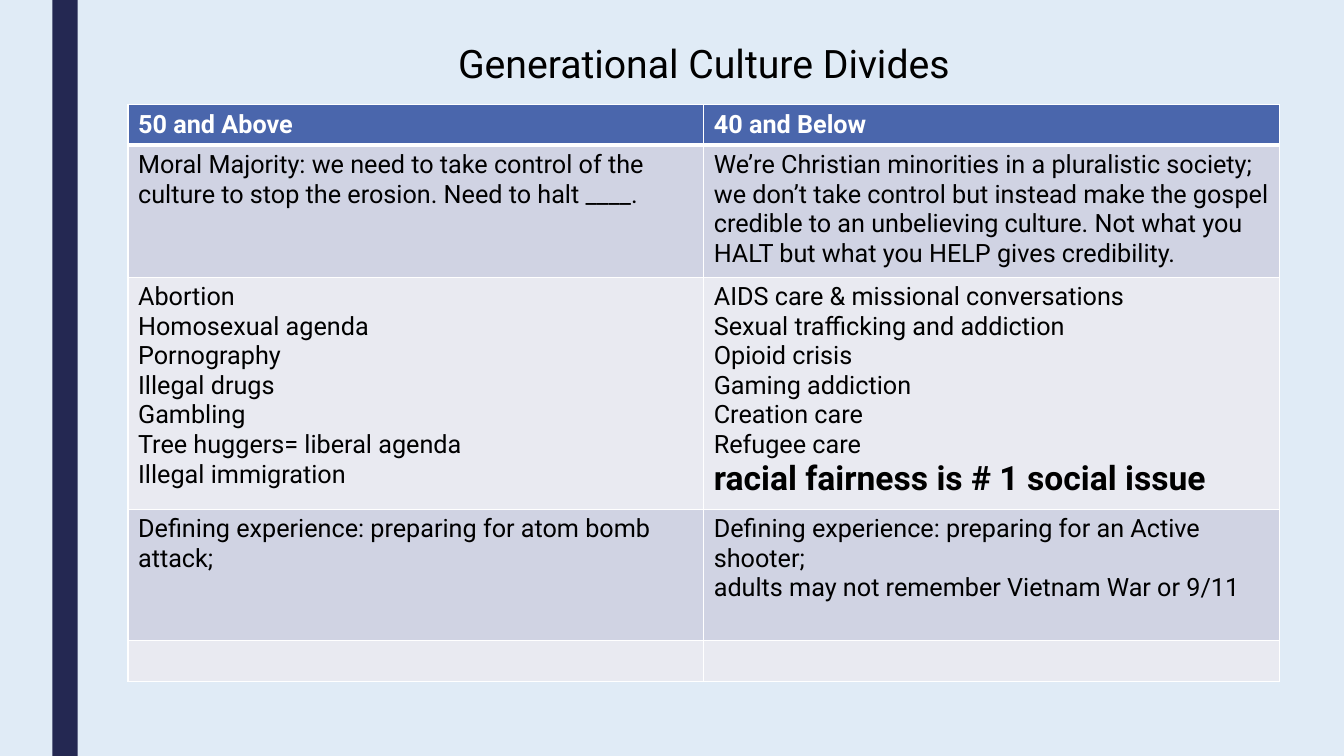
from lxml import etree
from pptx import Presentation
from pptx.dml.color import RGBColor
from pptx.enum.shapes import MSO_SHAPE
from pptx.enum.text import MSO_ANCHOR, PP_ALIGN
from pptx.oxml.ns import qn
from pptx.util import Inches, Pt

RECTANGLE = MSO_SHAPE.RECTANGLE
MIDDLE = MSO_ANCHOR.MIDDLE
LEFT, CENTER = PP_ALIGN.LEFT, PP_ALIGN.CENTER

# Content: each cell is a list of paragraphs
TITLE = "Generational Culture Divides"
HEADERS = (["50 and Above"], ["40 and Below"])
BODY = [
    (["Moral Majority: we need to take control of the culture to stop the erosion. Need to halt ____."],
     ["We’re Christian minorities in a pluralistic society; we don’t take control but instead make "
      "the gospel credible to an unbelieving culture. Not what you HALT but what you HELP gives "
      "credibility."]),
    (["Abortion", "Homosexual agenda", "Pornography", "Illegal drugs", "Gambling",
      "Tree huggers= liberal agenda", "Illegal immigration"],
     ["AIDS care & missional conversations", "Sexual trafficking and addiction", "Opioid crisis",
      "Gaming addiction", "Creation care", "Refugee care", "racial fairness is # 1 social issue"]),
    (["Defining experience: preparing for atom bomb attack;"],
     ["Defining experience: preparing for an Active shooter;",
      "adults may not remember Vietnam War or 9/11"]),
    ([""], [""]),
]
EMPHASIS = "racial fairness is # 1 social issue"

# Layout in inches
WIDTH, HEIGHT = 13.33, 7.5
TABLE_LEFT, TABLE_TOP, COLUMN_WIDTH = 1.27, 1.04, 5.71
ROW_HEIGHTS = [0.4, 1.31, 2.3, 1.3, 0.41]
TITLE_WIDTH, TITLE_HEIGHT, TITLE_TOP = 5.49, 0.57, 0.34

FONT = "Roboto"
BLACK, WHITE = "000000", "FFFFFF"
BACKGROUND, BAR, HEADER = "E0EBF6", "242852", "4A66AC"
BANDS = ("D0D3E3", "E9EAF1")


def set_fill(fill, color):
    fill.solid()
    fill.fore_color.rgb = RGBColor.from_string(color)


def write(paragraph, text, size=18, color=BLACK, bold=False, align=LEFT):
    paragraph.alignment = align
    font = paragraph.font
    if text:
        run = paragraph.add_run()
        run.text = text
        font = run.font
    font.name, font.size, font.bold = FONT, Pt(size), bold
    font.color.rgb = RGBColor.from_string(color)


def set_borders(cell, bottom_width):
    properties = cell._tc.get_or_add_tcPr()
    widths = {"a:lnL": 1, "a:lnR": 1, "a:lnT": 1, "a:lnB": bottom_width}
    for position, (side, width) in enumerate(widths.items()):
        line = etree.Element(qn(side), w=str(Pt(width)))
        solid = etree.SubElement(line, qn("a:solidFill"))
        etree.SubElement(solid, qn("a:srgbClr"), val=WHITE)
        properties.insert(position, line)


presentation = Presentation()
presentation.slide_width, presentation.slide_height = Inches(WIDTH), Inches(HEIGHT)
slide = presentation.slides.add_slide(presentation.slide_layouts[6])
set_fill(slide.background.fill, BACKGROUND)

# Side bar
bar = slide.shapes.add_shape(RECTANGLE, Inches(0.52), 0, Inches(0.25), Inches(HEIGHT))
bar.shadow.inherit = False
set_fill(bar.fill, BAR)
bar.line.fill.background()

# Title, centred over the table
title_left = TABLE_LEFT + COLUMN_WIDTH - TITLE_WIDTH / 2
title = slide.shapes.add_textbox(Inches(title_left), Inches(TITLE_TOP),
                                 Inches(TITLE_WIDTH), Inches(TITLE_HEIGHT))
title.text_frame.word_wrap = True
title.text_frame.vertical_anchor = MIDDLE
write(title.text_frame.paragraphs[0], TITLE, size=28, align=CENTER)

# Comparison table
rows = [HEADERS] + BODY
table = slide.shapes.add_table(len(rows), len(HEADERS), Inches(TABLE_LEFT), Inches(TABLE_TOP),
                               Inches(COLUMN_WIDTH * len(HEADERS)),
                               Inches(sum(ROW_HEIGHTS))).table
for column in table.columns:
    column.width = Inches(COLUMN_WIDTH)
for row_index, (row, height) in enumerate(zip(rows, ROW_HEIGHTS)):
    table.rows[row_index].height = Inches(height)
    is_header = row_index == 0
    for column_index, lines in enumerate(row):
        cell = table.cell(row_index, column_index)
        set_fill(cell.fill, HEADER if is_header else BANDS[(row_index - 1) % 2])
        set_borders(cell, 3 if is_header else 1)
        frame = cell.text_frame
        for line_index, text in enumerate(lines):
            paragraph = frame.add_paragraph() if line_index else frame.paragraphs[0]
            emphasised = text == EMPHASIS
            write(paragraph, text, size=24 if emphasised else 18,
                  color=WHITE if is_header else BLACK, bold=is_header or emphasised)

presentation.save("out.pptx")
